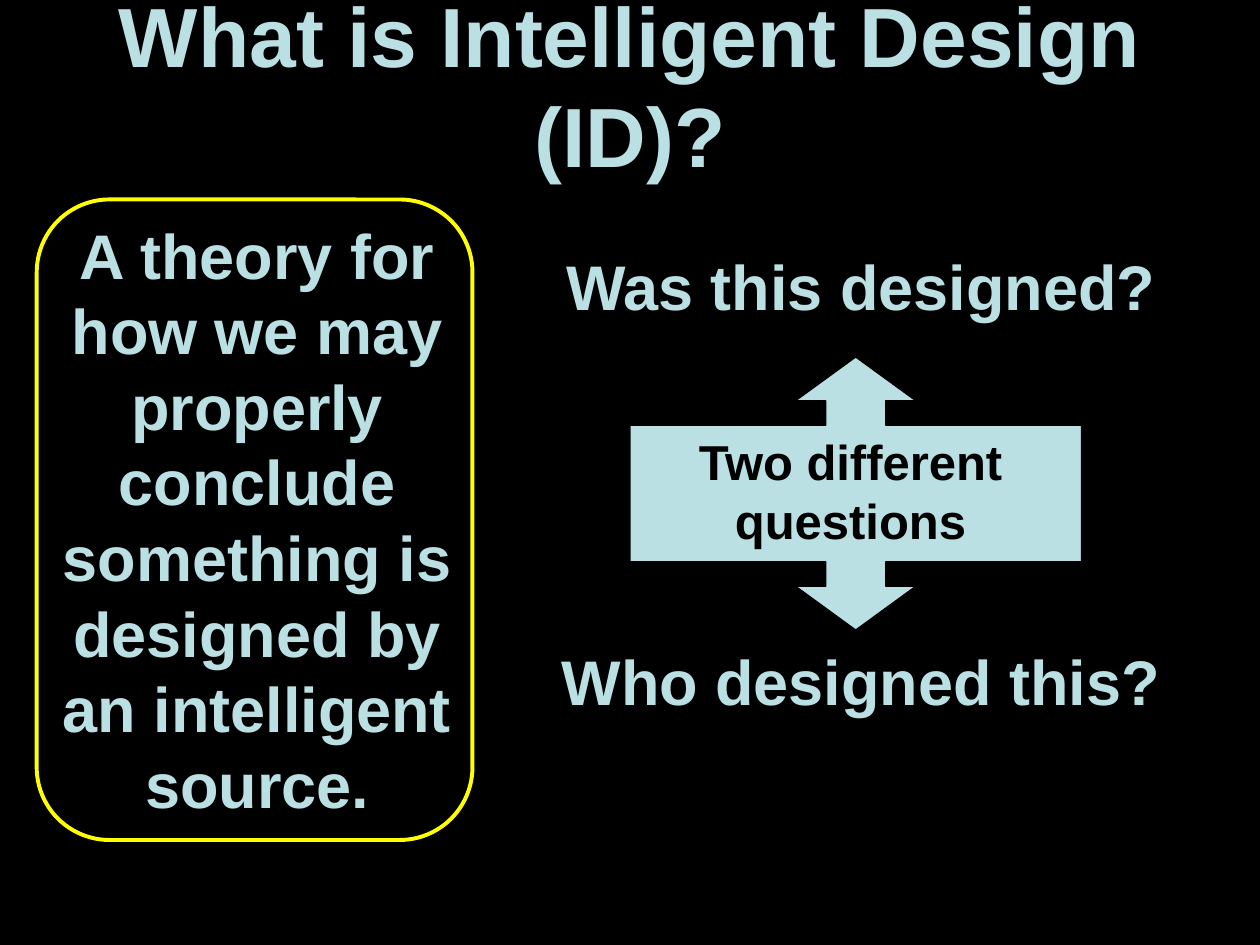
from dataclasses import dataclass

from pptx import Presentation
from pptx.dml.color import RGBColor
from pptx.enum.shapes import MSO_SHAPE as Kind
from pptx.enum.text import MSO_ANCHOR as Anchor, MSO_AUTO_SIZE as Fit, PP_ALIGN as Align
from pptx.util import Inches, Pt

BLACK = RGBColor(0x00, 0x00, 0x00)
PALE = RGBColor(0xBB, 0xE0, 0xE3)
YELLOW = RGBColor(0xFF, 0xFF, 0x00)

# The slide is a grid of 120 columns and 90 rows
WIDE, HIGH = Inches(10), Inches(7.5)
COLS, ROWS = 120, 90


@dataclass
class Box:
    col: float
    row: float
    cols: float
    rows: float

    def place(self) -> dict:
        return dict(left=round(WIDE * self.col / COLS),
                    top=round(HIGH * self.row / ROWS),
                    width=round(WIDE * self.cols / COLS),
                    height=round(HIGH * self.rows / ROWS))


@dataclass
class Label:
    words: str
    box: Box
    size: int = 36
    color: RGBColor = PALE


def assign(item, values: dict) -> None:
    for name, value in values.items():
        setattr(item, name, value)


def write(shape, label: Label, frame: dict) -> None:
    """Fill a text shape with one centred bold paragraph."""
    text = shape.text_frame
    text.text = label.words
    assign(text, {"word_wrap": True, **frame})
    para = text.paragraphs[0]
    para.alignment = Align.CENTER
    font = para.runs[0].font
    assign(font, {"name": "Arial", "size": Pt(label.size), "bold": True})
    font.color.rgb = label.color


def add_label(shapes, label: Label) -> None:
    shape = shapes.add_textbox(**label.box.place())
    write(shape, label, {"auto_size": Fit.SHAPE_TO_FIT_TEXT})


def add_panel(shapes, kind: Kind, box: Box, bends: list[float],
              edge: RGBColor, weight: float, fill: RGBColor | None = None) -> None:
    shape = shapes.add_shape(kind, **box.place())
    shape.shadow.inherit = False
    for spot, bend in enumerate(bends):
        shape.adjustments[spot] = bend
    if fill is None:
        shape.fill.background()
    else:
        shape.fill.solid()
        shape.fill.fore_color.rgb = fill
    shape.line.color.rgb = edge
    shape.line.width = Pt(weight)


TITLE = Label("What is Intelligent Design (ID)?", Box(0, 1, 120, 14), 48)
LABELS = [
    Label("A theory for how we may properly conclude something is "
          "designed by an intelligent source.", Box(3, 20, 43, 59.4)),
    Label("Was this designed?", Box(51, 23, 62, 8.5)),
    Label("Who designed this?", Box(51, 60.6, 62, 8.5)),
]
CALLOUT = Label("Two different questions", Box(62, 40.5, 38, 12.5), 28, BLACK)


def main() -> None:
    deck = Presentation()
    assign(deck, {"slide_width": WIDE, "slide_height": HIGH})
    slide = deck.slides.add_slide(deck.slide_layouts[5])
    slide.background.fill.solid()
    slide.background.fill.fore_color.rgb = BLACK

    # Title
    title = slide.shapes.title
    assign(title, TITLE.box.place())
    write(title, TITLE, {"auto_size": Fit.NONE, "vertical_anchor": Anchor.MIDDLE})

    # Definition and the two questions
    add_panel(slide.shapes, Kind.ROUNDED_RECTANGLE, Box(3.5, 19, 41.5, 61),
              [0.167], YELLOW, 2.25)
    for label in LABELS:
        add_label(slide.shapes, label)

    # Two-way callout between the questions
    group = slide.shapes.add_group_shape()
    add_panel(group.shapes, Kind.UP_DOWN_ARROW_CALLOUT, Box(60, 34, 43, 26),
              [0.22, 0.22, 0.16, 0.5], BLACK, 0.75, PALE)
    add_label(group.shapes, CALLOUT)

    deck.save("out.pptx")


if __name__ == "__main__":
    main()
